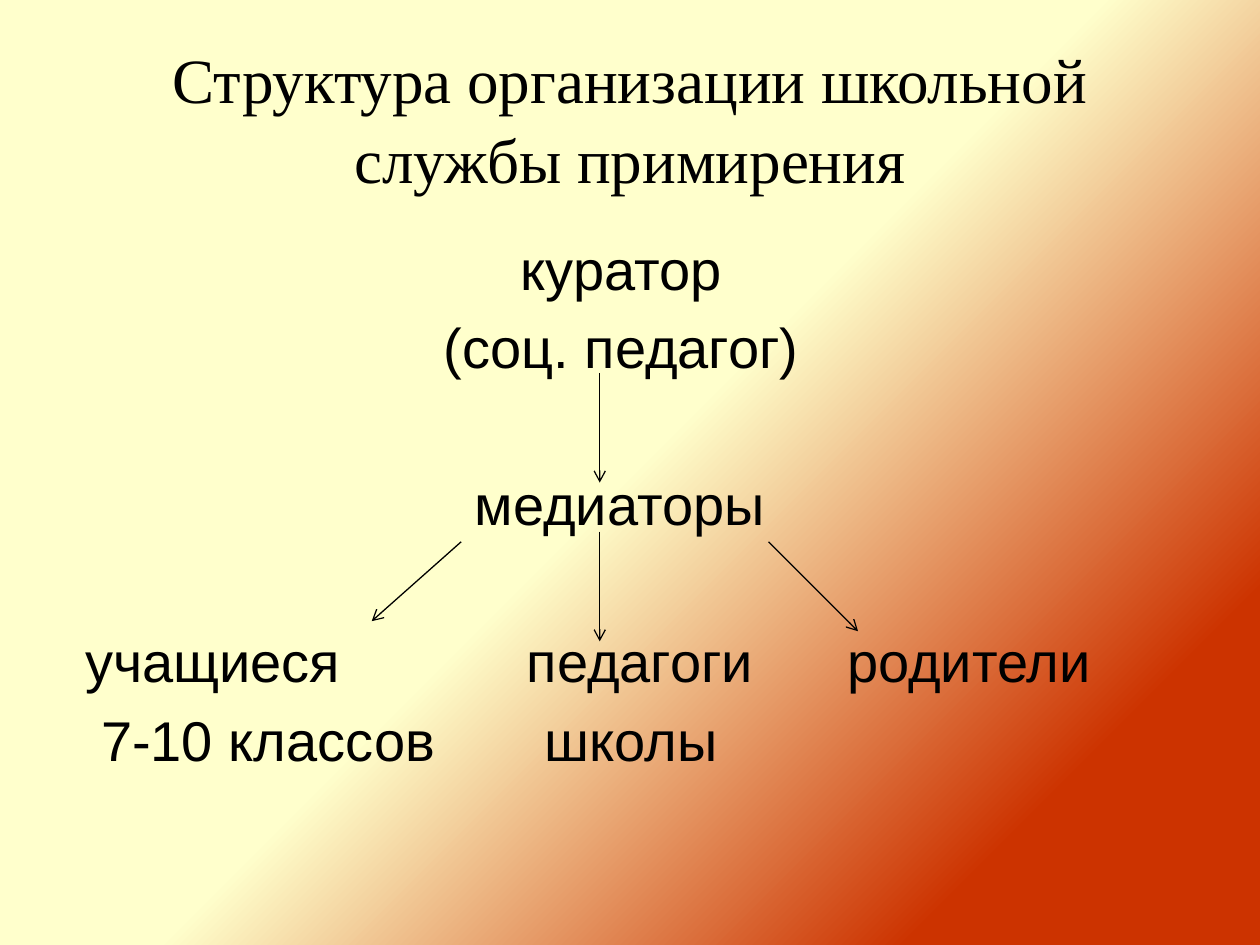
"""Build a slide showing the structure of a school reconciliation service."""
from dataclasses import dataclass

from lxml.etree import SubElement
from pptx import Presentation
from pptx.dml.color import RGBColor
from pptx.enum.shapes import MSO_CONNECTOR
from pptx.enum.text import MSO_ANCHOR, PP_ALIGN
from pptx.oxml.ns import qn
from pptx.util import Inches, Pt


@dataclass(frozen=True)
class Theme:
    ink: RGBColor = RGBColor(0x00, 0x00, 0x00)
    cream: RGBColor = RGBColor(0xFF, 0xFF, 0xCC)
    red: RGBColor = RGBColor(0xCC, 0x33, 0x00)
    title_font: str = "Times New Roman"
    body_font: str = "Arial"
    title_size: int = 36
    body_size: int = 32
    line_width: float = 0.75


THEME = Theme()
WIDTH, HEIGHT = 10, 7.5
TITLE = "Структура организации школьной службы примирения"
TITLE_BOX = (0.5, 0.3, 9, 1.25)
ROW_TOP, ROW_PITCH, ROW_HEIGHT = 1.87, 0.623, 0.51
LABEL_WIDTH = 3.4
ROLES = [
    ("куратор", 4.93, 0),
    ("(соц. педагог)", 4.93, 1),
    ("медиаторы", 4.92, 3),
    ("учащиеся", 1.69, 5),
    ("педагоги", 5.08, 5),
    ("родители", 7.69, 5),
    ("7-10 классов", 2.13, 6),
    ("школы", 5.01, 6),
]
ARROWS = [
    ((4.76, 2.96), (4.76, 3.83)),
    ((3.66, 4.3), (2.95, 4.93)),
    ((6.1, 4.3), (6.81, 5.01)),
    ((4.76, 4.22), (4.76, 5.09)),
]


def add_text(slide, text, box, *, font, size, spacing=1.0, inset=0):
    shape = slide.shapes.add_textbox(*map(Inches, box))
    frame = shape.text_frame
    frame.word_wrap = True
    frame.vertical_anchor = MSO_ANCHOR.MIDDLE
    frame.margin_left = frame.margin_right = Inches(inset)
    frame.margin_top = frame.margin_bottom = 0
    paragraph = frame.paragraphs[0]
    paragraph.alignment = PP_ALIGN.CENTER
    paragraph.line_spacing = spacing
    run = paragraph.add_run()
    run.text = text
    run.font.name = font
    run.font.size = Pt(size)
    run.font.color.rgb = THEME.ink


def add_arrow(slide, start, end):
    points = map(Inches, (*start, *end))
    connector = slide.shapes.add_connector(MSO_CONNECTOR.STRAIGHT, *points)
    connector.line.color.rgb = THEME.ink
    connector.line.width = Pt(THEME.line_width)
    SubElement(connector.line._get_or_add_ln(), qn("a:tailEnd"), type="arrow")
    SubElement(connector._element.spPr, qn("a:effectLst"))


def paint_background(slide):
    fill = slide.background.fill
    fill.gradient()
    fill.gradient_angle = 315
    colours = [(0.5, THEME.cream), (0.84, THEME.red)]
    for stop, (position, colour) in zip(fill.gradient_stops, colours):
        stop.position = position
        stop.color.rgb = colour


def main():
    presentation = Presentation()
    presentation.slide_width, presentation.slide_height = Inches(WIDTH), Inches(HEIGHT)
    slide = presentation.slides.add_slide(presentation.slide_layouts[6])
    paint_background(slide)
    add_text(slide, TITLE, TITLE_BOX, font=THEME.title_font,
             size=THEME.title_size, spacing=1.05, inset=0.1)
    for text, centre, row in ROLES:
        box = (centre - LABEL_WIDTH / 2, ROW_TOP + row * ROW_PITCH, LABEL_WIDTH, ROW_HEIGHT)
        add_text(slide, text, box, font=THEME.body_font, size=THEME.body_size)
    for start, end in ARROWS:
        add_arrow(slide, start, end)
    presentation.save("out.pptx")


if __name__ == "__main__":
    main()
